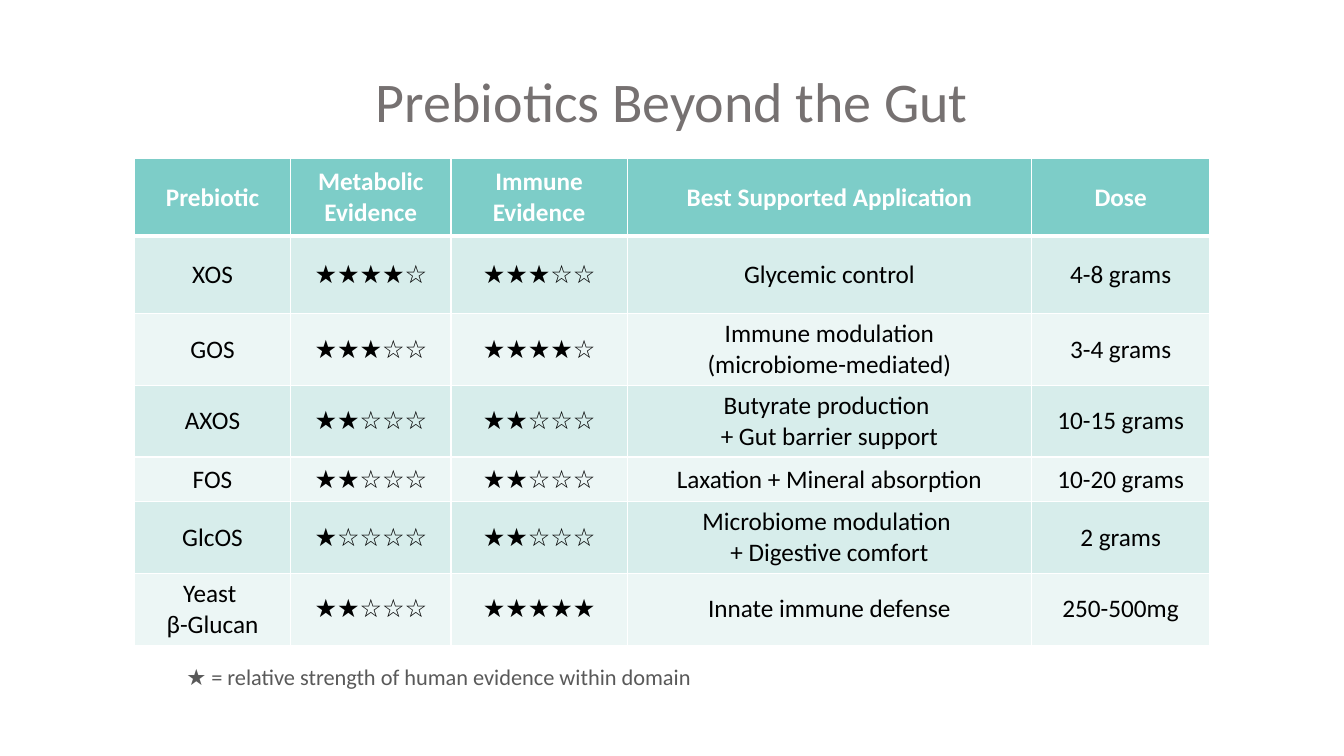
"""Build the slide that rates prebiotics by evidence, application and dose."""
from dataclasses import dataclass

from lxml import etree
from pptx import Presentation
from pptx.dml.color import RGBColor
from pptx.enum.text import MSO_ANCHOR, PP_ALIGN
from pptx.oxml.ns import qn
from pptx.util import Pt

CENTER = PP_ALIGN.CENTER
LEFT = PP_ALIGN.LEFT
MIDDLE = MSO_ANCHOR.MIDDLE
TITLE_ONLY = 5

TITLE = "Prebiotics Beyond the Gut"
HEADERS = ["Prebiotic", "Metabolic Evidence", "Immune Evidence", "Best Supported Application", "Dose"]
PREBIOTICS = [
    ("XOS", 4, 3, "Glycemic control", "4-8 grams"),
    ("GOS", 3, 4, "Immune modulation\n(microbiome-mediated)", "3-4 grams"),
    ("AXOS", 2, 2, "Butyrate production \n+ Gut barrier support", "10-15 grams"),
    ("FOS", 2, 2, "Laxation + Mineral absorption", "10-20 grams"),
    ("GlcOS", 1, 2, "Microbiome modulation \n+ Digestive comfort", "2 grams"),
    ("Yeast \nβ-Glucan", 2, 5, "Innate immune defense", "250-500mg"),
]
FOOTNOTE = "★ = relative strength of human evidence within domain"

SLIDE_SIZE = (960, 540)
TITLE_BOX = (66, 28.8, 828, 91.4)
TABLE_ORIGIN = (96, 113.3)
FOOTNOTE_BOX = (126, 470.2, 378.7, 26.6)
COLUMN_WIDTHS = [111.6, 114.5, 126, 288.7, 127.4]
ROW_HEIGHTS = [55.4, 55.4, 51.2, 51.2, 32, 51.2, 51.2]
MAX_STARS = 5


@dataclass(frozen=True)
class Theme:
    """Colours, font and sizes of the slide."""
    font: str = "Calibri"
    title_size: float = 40
    table_size: float = 18
    note_size: float = 16
    title: str = "767171"
    note: str = "595959"
    body: str = "000000"
    white: str = "FFFFFF"
    header_fill: str = "7DCDC8"
    bands: tuple = ("D7EDEB", "ECF6F5")
    rule: float = 1
    header_rule: float = 3


THEME = Theme()


def write_text(frame, text, *, size, color, bold=False, align=CENTER, spacing=None):
    """Write one paragraph per line of text with a common format."""
    frame.text = text
    for paragraph in frame.paragraphs:
        paragraph.alignment = align
        paragraph.line_spacing = spacing
        for run in paragraph.runs:
            font = run.font
            font.name, font.size, font.bold = THEME.font, Pt(size), bold
            font.color.rgb = RGBColor.from_string(color)


def set_borders(cell, top, bottom):
    """Draw white rules around a cell, ahead of its fill."""
    properties = cell._tc.get_or_add_tcPr()
    sides = {"a:lnL": THEME.rule, "a:lnR": THEME.rule, "a:lnT": top, "a:lnB": bottom}
    for position, (side, width) in enumerate(sides.items()):
        line = etree.Element(qn(side), w=str(Pt(width)))
        fill = etree.SubElement(line, qn("a:solidFill"))
        etree.SubElement(fill, qn("a:srgbClr"), val=THEME.white)
        properties.insert(position, line)


def cell_text(value):
    """Turn a rating into stars and leave words as they are."""
    if isinstance(value, int):
        return "★" * value + "☆" * (MAX_STARS - value)
    return value


def add_title(slide):
    """Place and format the title."""
    title = slide.shapes.title
    title.left, title.top, title.width, title.height = map(Pt, TITLE_BOX)
    title.text_frame.vertical_anchor = MIDDLE
    write_text(title.text_frame, TITLE, size=THEME.title_size, color=THEME.title, spacing=0.9)


def add_evidence_table(slide):
    """Add the table with its header and banded rows."""
    rows = [HEADERS, *PREBIOTICS]
    frame = slide.shapes.add_table(
        len(rows), len(HEADERS), *map(Pt, (*TABLE_ORIGIN, sum(COLUMN_WIDTHS), sum(ROW_HEIGHTS))))
    table = frame.table
    for column, width in zip(table.columns, COLUMN_WIDTHS):
        column.width = Pt(width)
    for index, (row, height, values) in enumerate(zip(table.rows, ROW_HEIGHTS, rows)):
        row.height = Pt(height)
        is_header = index == 0
        fill = THEME.header_fill if is_header else THEME.bands[(index - 1) % 2]
        color = THEME.white if is_header else THEME.body
        top = THEME.header_rule if index == 1 else THEME.rule
        bottom = THEME.header_rule if is_header else THEME.rule
        for cell, value in zip(row.cells, values):
            cell.vertical_anchor = MIDDLE
            cell.fill.solid()
            cell.fill.fore_color.rgb = RGBColor.from_string(fill)
            set_borders(cell, top, bottom)
            write_text(cell.text_frame, cell_text(value), size=THEME.table_size, color=color, bold=is_header)


def add_footnote(slide):
    """Add the key to the stars."""
    box = slide.shapes.add_textbox(*map(Pt, FOOTNOTE_BOX))
    box.text_frame.word_wrap = False
    write_text(box.text_frame, FOOTNOTE, size=THEME.note_size, color=THEME.note, align=LEFT)


def main():
    """Assemble and save the presentation."""
    presentation = Presentation()
    presentation.slide_width, presentation.slide_height = map(Pt, SLIDE_SIZE)
    slide = presentation.slides.add_slide(presentation.slide_layouts[TITLE_ONLY])
    add_title(slide)
    add_evidence_table(slide)
    add_footnote(slide)
    presentation.save("out.pptx")


if __name__ == "__main__":
    main()
